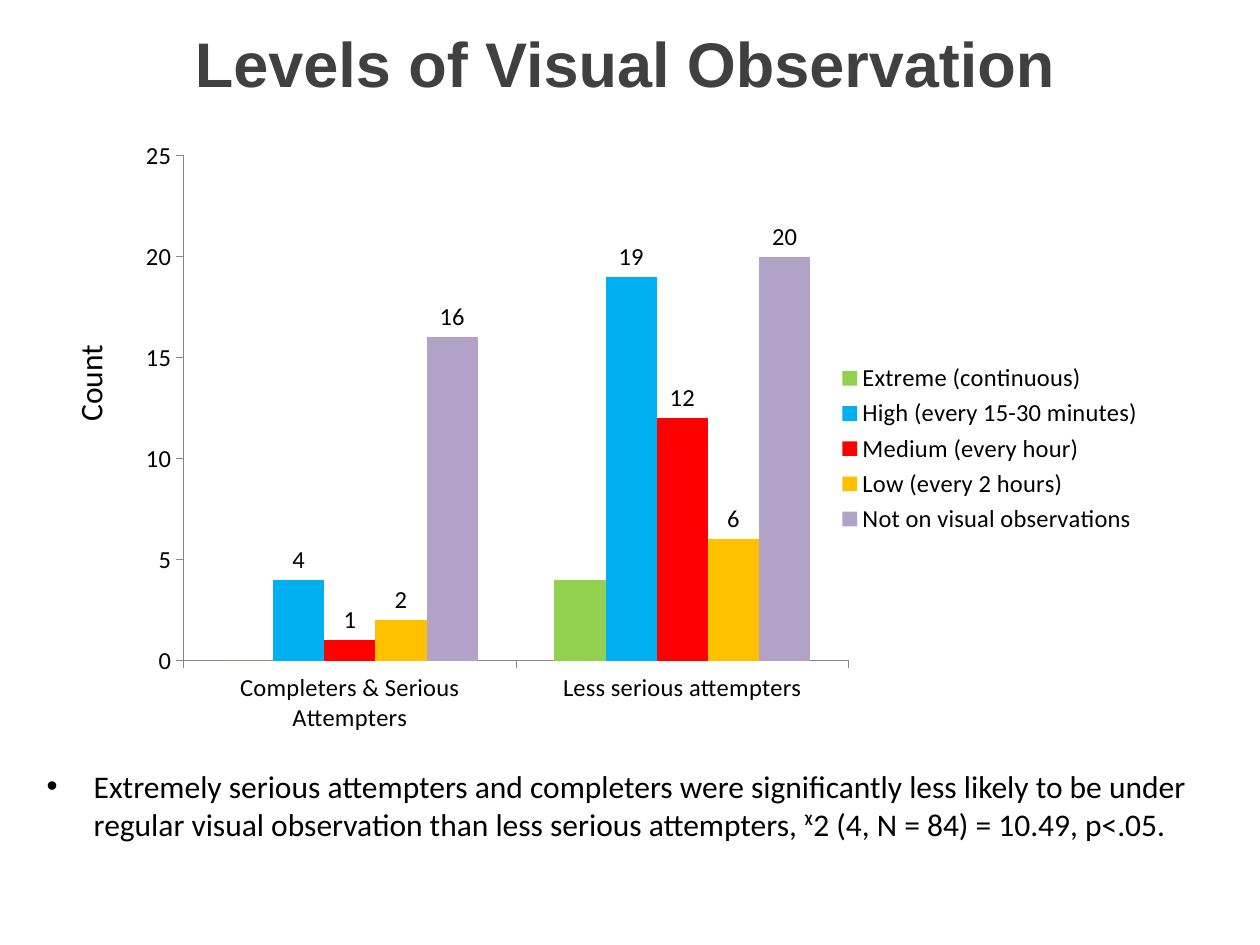
from dataclasses import dataclass

from lxml.etree import SubElement
from pptx import Presentation
from pptx.chart.data import CategoryChartData
from pptx.dml.color import RGBColor
from pptx.enum.chart import XL_CHART_TYPE, XL_LABEL_POSITION, XL_LEGEND_POSITION, XL_TICK_MARK
from pptx.enum.text import MSO_ANCHOR, PP_ALIGN
from pptx.oxml import parse_xml
from pptx.oxml.ns import nsdecls, qn
from pptx.util import Cm, Pt


@dataclass(frozen=True)
class Theme:
    heading_font: str = "Arial"
    body_font: str = "Calibri"
    heading_color: str = "404040"
    text_color: str = "000000"
    axis_color: str = "868686"
    heading_size: int = 36
    body_size: int = 18
    chart_size: int = 14


@dataclass(frozen=True)
class Area:
    left: float
    top: float
    width: float
    height: float

    def lengths(self) -> tuple:
        return Cm(self.left), Cm(self.top), Cm(self.width), Cm(self.height)


@dataclass(frozen=True)
class Level:
    name: str
    counts: tuple
    color: str
    labelled: bool = True


THEME = Theme()
GROUPS = ("Completers & Serious Attempters", "Less serious attempters")
LEVELS = (
    Level("Extreme (continuous)", (0, 4), "92D050", labelled=False),
    Level("High (every 15-30 minutes)", (4, 19), "00B0F0"),
    Level("Medium (every hour)", (1, 12), "FF0000"),
    Level("Low (every 2 hours)", (2, 6), "FFC000"),
    Level("Not on visual observations", (16, 20), "B3A2C7"),
)
PLOT = {"x": 0.101, "y": 0.033, "w": 0.615, "h": 0.805}


def add_text(page, area: Area, text: str, *, font: str = THEME.body_font,
             size: int = THEME.body_size, color: str = THEME.text_color,
             bold: bool = False, align=PP_ALIGN.LEFT, anchor=MSO_ANCHOR.TOP,
             rotation: float = 0, bullet: str = "", indent: float = 0):
    box = page.shapes.add_textbox(*area.lengths())
    box.rotation = rotation
    frame = box.text_frame
    frame.word_wrap = True
    frame.vertical_anchor = anchor
    para = frame.paragraphs[0]
    para.alignment = align
    if bullet:
        properties = para._p.get_or_add_pPr()
        properties.set("marL", str(Cm(indent)))
        properties.set("indent", str(-Cm(indent)))
        SubElement(properties, qn("a:buFont"), typeface="Arial")
        SubElement(properties, qn("a:buChar"), char=bullet)
    span = para.add_run()
    span.text = text
    span.font.name = font
    span.font.size = Pt(size)
    span.font.bold = bold
    span.font.color.rgb = RGBColor.from_string(color)
    return box


def style_axis(axis) -> None:
    axis.has_major_gridlines = False
    axis.major_tick_mark = XL_TICK_MARK.OUTSIDE
    axis.minor_tick_mark = XL_TICK_MARK.NONE
    axis.format.line.color.rgb = RGBColor.from_string(THEME.axis_color)
    axis.format.line.width = Pt(0.75)


def style_level(series, level: Level) -> None:
    series.format.fill.solid()
    series.format.fill.fore_color.rgb = RGBColor.from_string(level.color)
    series.invert_if_negative = False
    if level.labelled:
        labels = series.data_labels
        labels.show_value = True
        labels.position = XL_LABEL_POSITION.OUTSIDE_END


def place_plot(chart) -> None:
    plot_area = chart._chartSpace.chart.plotArea
    for layout in plot_area.findall(qn("c:layout")):
        plot_area.remove(layout)
    sizes = "".join(f'<c:{key} val="{value}"/>' for key, value in PLOT.items())
    plot_area.insert(0, parse_xml(
        f'<c:layout {nsdecls("c")}><c:manualLayout><c:layoutTarget val="inner"/>'
        f'<c:xMode val="edge"/><c:yMode val="edge"/>{sizes}</c:manualLayout></c:layout>'))


def add_observation_chart(page, area: Area) -> None:
    data = CategoryChartData(number_format="General")
    data.categories = GROUPS
    for level in LEVELS:
        data.add_series(level.name, level.counts)
    chart = page.shapes.add_chart(XL_CHART_TYPE.COLUMN_CLUSTERED, *area.lengths(), data).chart
    chart.has_title = False
    chart.font.name = THEME.body_font
    chart.font.size = Pt(THEME.chart_size)
    chart.font.color.rgb = RGBColor.from_string(THEME.text_color)
    chart.has_legend = True
    chart.legend.position = XL_LEGEND_POSITION.RIGHT
    chart.legend.include_in_layout = False
    style_axis(chart.category_axis)
    style_axis(chart.value_axis)
    chart.value_axis.minimum_scale = 0
    chart.value_axis.maximum_scale = 25
    chart.value_axis.major_unit = 5
    plot = chart.plots[0]
    plot.gap_width = 150
    plot.overlap = 0
    plot.vary_by_categories = False
    for series, level in zip(plot.series, LEVELS):
        style_level(series, level)
    place_plot(chart)


def main() -> None:
    deck = Presentation()
    deck.slide_width, deck.slide_height = Cm(25.4), Cm(19.05)
    page = deck.slides.add_slide(deck.slide_layouts[6])
    add_text(page, Area(-0.1, 0.2, 25.4, 2.13), "Levels of Visual Observation",
             font=THEME.heading_font, size=THEME.heading_size, color=THEME.heading_color,
             bold=True, align=PP_ALIGN.CENTER, anchor=MSO_ANCHOR.MIDDLE)
    add_text(page, Area(0.69, 15.34, 24.2, 1.8),
             "Extremely serious attempters and completers were significantly less likely "
             "to be under regular visual observation than less serious attempters, "
             "ᵡ2 (4, N = 84) = 10.49, p<.05.", bullet="•", indent=0.95)
    add_observation_chart(page, Area(1.5, 2.72, 21.8, 12.65))
    add_text(page, Area(0.61, 7.21, 2.41, 1.02), "Count",
             align=PP_ALIGN.CENTER, rotation=270)
    deck.save("out.pptx")


if __name__ == "__main__":
    main()
